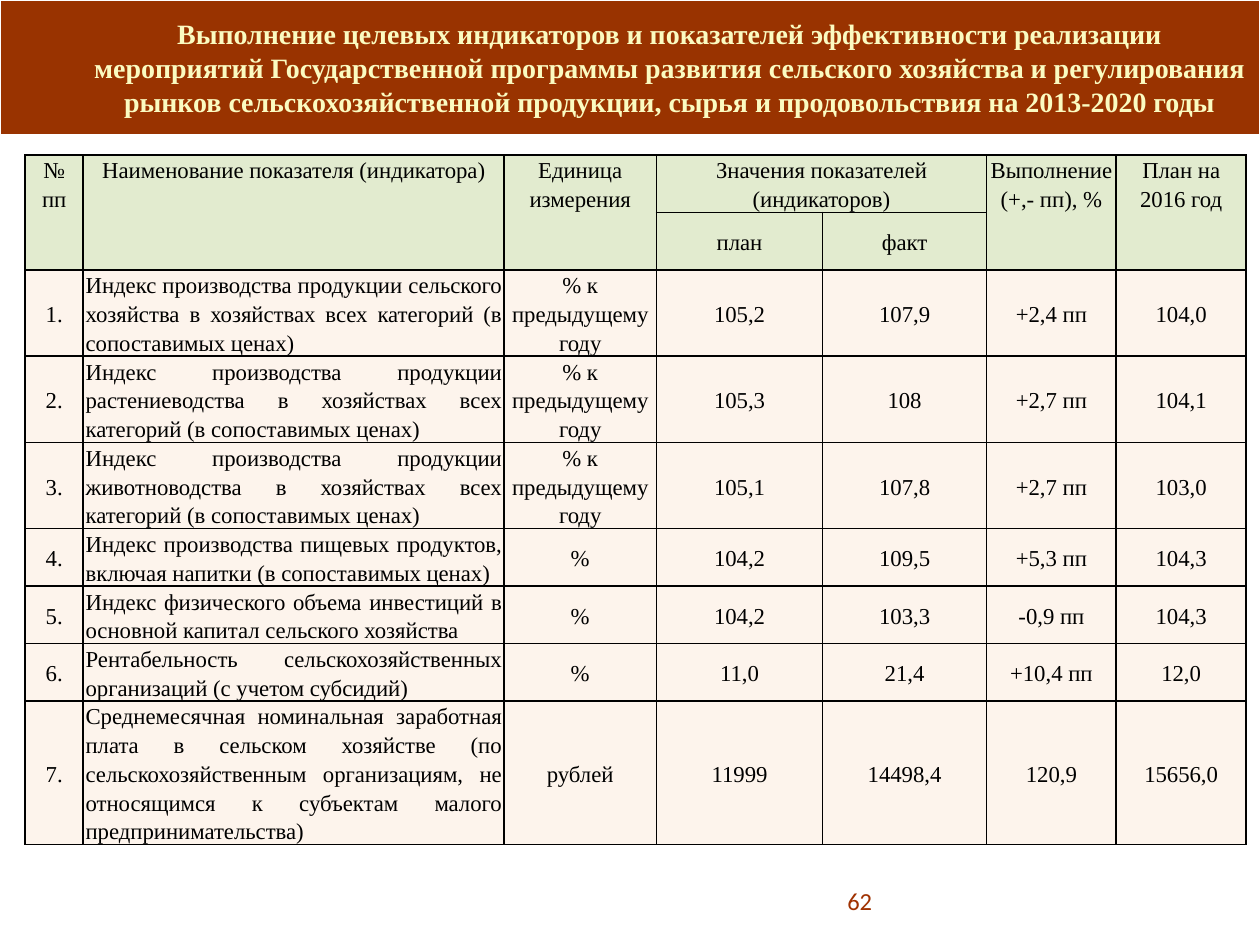
from lxml import etree
from pptx import Presentation
from pptx.dml.color import RGBColor
from pptx.enum.shapes import MSO_SHAPE
from pptx.enum.text import MSO_ANCHOR, PP_ALIGN
from pptx.oxml.ns import qn
from pptx.util import Inches, Pt

CENTER, JUSTIFY, RIGHT = PP_ALIGN.CENTER, PP_ALIGN.JUSTIFY, PP_ALIGN.RIGHT
TOP, MIDDLE = MSO_ANCHOR.TOP, MSO_ANCHOR.MIDDLE
RECTANGLE, ROUNDED = MSO_SHAPE.RECTANGLE, MSO_SHAPE.ROUNDED_RECTANGLE

COLORS = {
    "banner": "993300", "banner_line": "FFFFFF", "title": "FBFBC1",
    "header": "C3D69B", "body": "FDEADA", "text": "000000", "page": "A03202",
}
SERIF, SANS = "Times New Roman", "Calibri"

TITLE = (
    "Выполнение целевых индикаторов и показателей эффективности реализации "
    "мероприятий Государственной программы развития сельского хозяйства и "
    "регулирования рынков сельскохозяйственной продукции, сырья и "
    "продовольствия на 2013-2020 годы"
)
PAGE_NUMBER = "62"

HEADER = [
    ["№\vпп", "Наименование показателя (индикатора)", "Единица измерения",
     "Значения показателей (индикаторов)", "", "Выполнение\n(+,- пп), %",
     "План на 2016 год"],
    ["", "", "", "план", "факт", "", ""],
]
TO_PREVIOUS_YEAR = "% к предыдущему году"
INDICATORS = [
    ["Индекс производства продукции сельского хозяйства в хозяйствах всех "
     "категорий (в сопоставимых ценах)",
     TO_PREVIOUS_YEAR, "105,2", "107,9", "+2,4 пп", "104,0"],
    ["Индекс производства продукции растениеводства в хозяйствах всех "
     "категорий (в сопоставимых ценах)",
     TO_PREVIOUS_YEAR, "105,3", "108", "+2,7 пп", "104,1"],
    ["Индекс производства продукции животноводства в хозяйствах всех "
     "категорий (в сопоставимых ценах)",
     TO_PREVIOUS_YEAR, "105,1", "107,8", "+2,7 пп", "103,0"],
    ["Индекс производства пищевых продуктов, включая напитки "
     "(в сопоставимых ценах)",
     "%", "104,2", "109,5", "+5,3 пп", "104,3"],
    ["Индекс физического объема инвестиций в основной капитал сельского "
     "хозяйства",
     "%", "104,2", "103,3", "-0,9 пп", "104,3"],
    ["Рентабельность сельскохозяйственных организаций (с учетом субсидий)",
     "%", "11,0", "21,4", "+10,4 пп", "12,0"],
    ["Среднемесячная номинальная заработная плата в сельском хозяйстве "
     "(по сельскохозяйственным организациям, не относящимся к субъектам "
     "малого предпринимательства)",
     "рублей", "11999", "14498,4", "120,9", "15656,0"],
]
COLUMN_WIDTHS = [0.46, 3.34, 1.21, 1.32, 1.3, 1.03, 1.03]
ROW_LINES = [2, 2, 3, 3, 3, 2, 2, 2, 5]
LINE_HEIGHT = 0.22
NAME_COLUMN = 1
TALL_HEADER_COLUMNS = [0, 1, 2, 5, 6]


def rgb(name):
    return RGBColor.from_string(COLORS[name])


def format_text(frame, size, font, color, align, bold=False, spacing=None):
    for paragraph in frame.paragraphs:
        paragraph.alignment = align
        if spacing:
            paragraph.line_spacing = spacing
        for run in paragraph.runs:
            run.font.size = Pt(size)
            run.font.name = font
            run.font.bold = bold
            run.font.color.rgb = rgb(color)


def add_text_shadow(run):
    fill = run.font.fill._xPr.find(qn("a:solidFill"))
    effects = etree.Element(qn("a:effectLst"))
    shadow = etree.SubElement(effects, qn("a:outerShdw"), blurRad="38100",
                              dist="38100", dir="2700000", algn="tl")
    black = etree.SubElement(shadow, qn("a:srgbClr"), val=COLORS["text"])
    etree.SubElement(black, qn("a:alpha"), val="43000")
    fill.addnext(effects)


def paint_cell(cell, color, opacity):
    """Give the cell a translucent fill and thin borders on all sides."""
    cell.fill.solid()
    cell.fill.fore_color.rgb = rgb(color)
    properties = cell._tc.get_or_add_tcPr()
    tint = properties.find(qn("a:solidFill")).find(qn("a:srgbClr"))
    etree.SubElement(tint, qn("a:alpha"), val=str(opacity * 1000))
    for index, side in enumerate(["lnL", "lnR", "lnT", "lnB"]):
        border = etree.Element(qn(f"a:{side}"), w=str(Pt(1)))
        stroke = etree.SubElement(border, qn("a:solidFill"))
        etree.SubElement(stroke, qn("a:srgbClr"), val=COLORS["text"])
        properties.insert(index, border)


def add_banner(slide):
    banner = slide.shapes.add_shape(RECTANGLE, 0, 0, Inches(10), Inches(1.07))
    banner.shadow.inherit = False
    banner.fill.solid()
    banner.fill.fore_color.rgb = rgb("banner")
    banner.line.color.rgb = rgb("banner_line")
    banner.line.width = Pt(0.75)

    title = slide.shapes.add_shape(ROUNDED, Inches(0.59), 0,
                                   Inches(9.41), Inches(1.07))
    title.adjustments[0] = 0.12
    title.shadow.inherit = False
    title.fill.background()
    title.line.fill.background()
    frame = title.text_frame
    frame.word_wrap = True
    frame.vertical_anchor = MIDDLE
    frame.margin_left, frame.margin_right = Inches(0.1), Inches(0.06)
    frame.margin_top = frame.margin_bottom = Inches(0.09)
    frame.text = TITLE
    format_text(frame, 16, SERIF, "title", CENTER, bold=True)
    add_text_shadow(frame.paragraphs[0].runs[0])


def add_indicator_table(slide):
    rows = HEADER + [[f"{number}.", *indicator]
                     for number, indicator in enumerate(INDICATORS, 1)]
    table = slide.shapes.add_table(
        len(rows), len(COLUMN_WIDTHS), Inches(0.2), Inches(1.23),
        Inches(sum(COLUMN_WIDTHS)), Inches(LINE_HEIGHT * sum(ROW_LINES))).table
    for column, width in zip(table.columns, COLUMN_WIDTHS):
        column.width = Inches(width)
    for row, lines in zip(table.rows, ROW_LINES):
        row.height = Inches(LINE_HEIGHT * lines)

    for r, row in enumerate(rows):
        is_header = r < len(HEADER)
        for c, text in enumerate(row):
            cell = table.cell(r, c)
            cell.text_frame.text = text
            cell.margin_left = cell.margin_right = Inches(0.02)
            cell.margin_top = cell.margin_bottom = 0
            cell.vertical_anchor = TOP if r == 0 else MIDDLE
            align = JUSTIFY if c == NAME_COLUMN and not is_header else CENTER
            format_text(cell.text_frame, 13, SERIF, "text", align, spacing=1.15)
            if is_header:
                paint_cell(cell, "header", 48)
            else:
                paint_cell(cell, "body", 50)

    for c in TALL_HEADER_COLUMNS:
        table.cell(0, c).merge(table.cell(1, c))
    table.cell(0, 3).merge(table.cell(0, 4))


def add_page_number(slide):
    frame = slide.shapes.add_textbox(Inches(5.87), Inches(6.95),
                                     Inches(1.15), Inches(0.4)).text_frame
    frame.word_wrap = True
    frame.vertical_anchor = MIDDLE
    frame.text = PAGE_NUMBER
    format_text(frame, 14, SANS, "page", RIGHT)


def main():
    presentation = Presentation()
    presentation.slide_width, presentation.slide_height = Inches(10), Inches(7.5)
    slide = presentation.slides.add_slide(presentation.slide_layouts[6])
    add_banner(slide)
    add_indicator_table(slide)
    add_page_number(slide)
    presentation.save("out.pptx")


if __name__ == "__main__":
    main()
